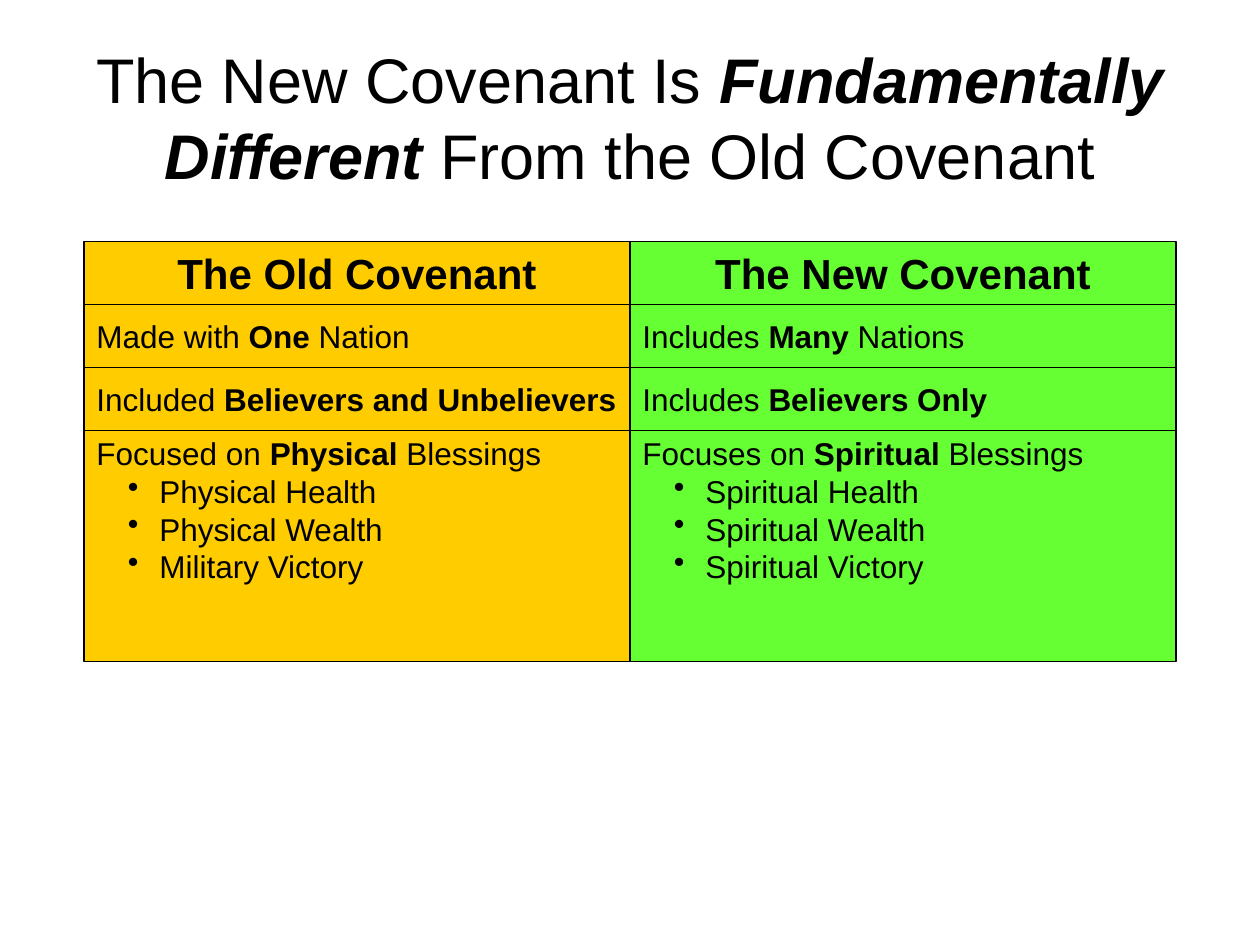
from pptx import Presentation
from pptx.dml.color import RGBColor
from pptx.enum.shapes import MSO_SHAPE
from pptx.enum.text import MSO_ANCHOR, PP_ALIGN
from pptx.oxml.xmlchemy import OxmlElement
from pptx.util import Pt

RECT = MSO_SHAPE.RECTANGLE
LEFT, CENTER = PP_ALIGN.LEFT, PP_ALIGN.CENTER
TOP, MIDDLE = MSO_ANCHOR.TOP, MSO_ANCHOR.MIDDLE

COLORS = {"ink": "000000", "old": "FFCC00", "new": "66FF33"}


def write(paragraph, text, *, size, font, color, align=LEFT, bold=False,
          italic_emphasis=False, bullet=False):
    """Write text into a paragraph; parts between asterisks are emphasized."""
    paragraph.alignment = align
    for index, part in enumerate(text.split("*")):
        if not part:
            continue
        emphasized = index % 2 == 1
        run = paragraph.add_run()
        run.text = part
        run.font.name = font
        run.font.size = Pt(size)
        run.font.bold = bold or emphasized
        run.font.italic = emphasized and italic_emphasis
        run.font.color.rgb = RGBColor.from_string(color)
    if bullet:
        properties = paragraph._p.get_or_add_pPr()
        properties.set("marL", str(Pt(36)))
        properties.set("indent", str(Pt(-18)))
        mark = OxmlElement("a:buChar")
        mark.set("char", "•")
        properties.append(mark)


class CovenantSlide:
    font = "Arial"
    title_size, header_size, body_size = 36, 24, 18
    border = 0.75

    def __init__(self, slide):
        self.slide = slide

    def title(self, text, left, top, width, height):
        box = self.slide.shapes.add_textbox(Pt(left), Pt(top), Pt(width), Pt(height))
        frame = box.text_frame
        frame.word_wrap = True
        frame.vertical_anchor = MIDDLE
        write(frame.paragraphs[0], text, size=self.title_size, font=self.font,
              color=COLORS["ink"], align=CENTER, italic_emphasis=True)

    def cell(self, lines, left, top, width, height, fill, header=False):
        box = self.slide.shapes.add_shape(RECT, Pt(left), Pt(top), Pt(width), Pt(height))
        box.shadow.inherit = False
        box.fill.solid()
        box.fill.fore_color.rgb = RGBColor.from_string(COLORS[fill])
        box.line.color.rgb = RGBColor.from_string(COLORS["ink"])
        box.line.width = Pt(self.border)

        frame = box.text_frame
        frame.word_wrap = True
        frame.vertical_anchor = MIDDLE if len(lines) == 1 else TOP
        frame.margin_top = frame.margin_bottom = Pt(2)
        if not header:
            frame.margin_right = 0
        for index, line in enumerate(lines):
            paragraph = frame.add_paragraph() if index else frame.paragraphs[0]
            write(paragraph, line, font=self.font, color=COLORS["ink"],
                  size=self.header_size if header else self.body_size,
                  align=CENTER if header else LEFT, bold=header, bullet=index > 0)


# Each row: height, old covenant lines, new covenant lines
ROWS = [
    (36, ["The Old Covenant"], ["The New Covenant"]),
    (36, ["Made with *One* Nation"], ["Includes *Many* Nations"]),
    (36, ["Included *Believers and Unbelievers*"], ["Includes *Believers Only*"]),
    (132,
     ["Focused on *Physical* Blessings",
      "Physical Health", "Physical Wealth", "Military Victory"],
     ["Focuses on *Spiritual* Blessings",
      "Spiritual Health", "Spiritual Wealth", "Spiritual Victory"]),
]
GRID_LEFT, GRID_TOP, COLUMN_WIDTH = 48, 138, 312


def main():
    deck = Presentation()
    deck.slide_width, deck.slide_height = Pt(720), Pt(540)
    page = CovenantSlide(deck.slides.add_slide(deck.slide_layouts[6]))

    # Title
    page.title("The New Covenant Is *Fundamentally Different* From the Old Covenant",
               36, 21.6, 648, 90)

    # Comparison grid
    top = GRID_TOP
    for row, (height, *sides) in enumerate(ROWS):
        for column, (lines, fill) in enumerate(zip(sides, ("old", "new"))):
            page.cell(lines, GRID_LEFT + column * COLUMN_WIDTH, top,
                      COLUMN_WIDTH, height, fill, header=row == 0)
        top += height

    deck.save("out.pptx")


if __name__ == "__main__":
    main()
